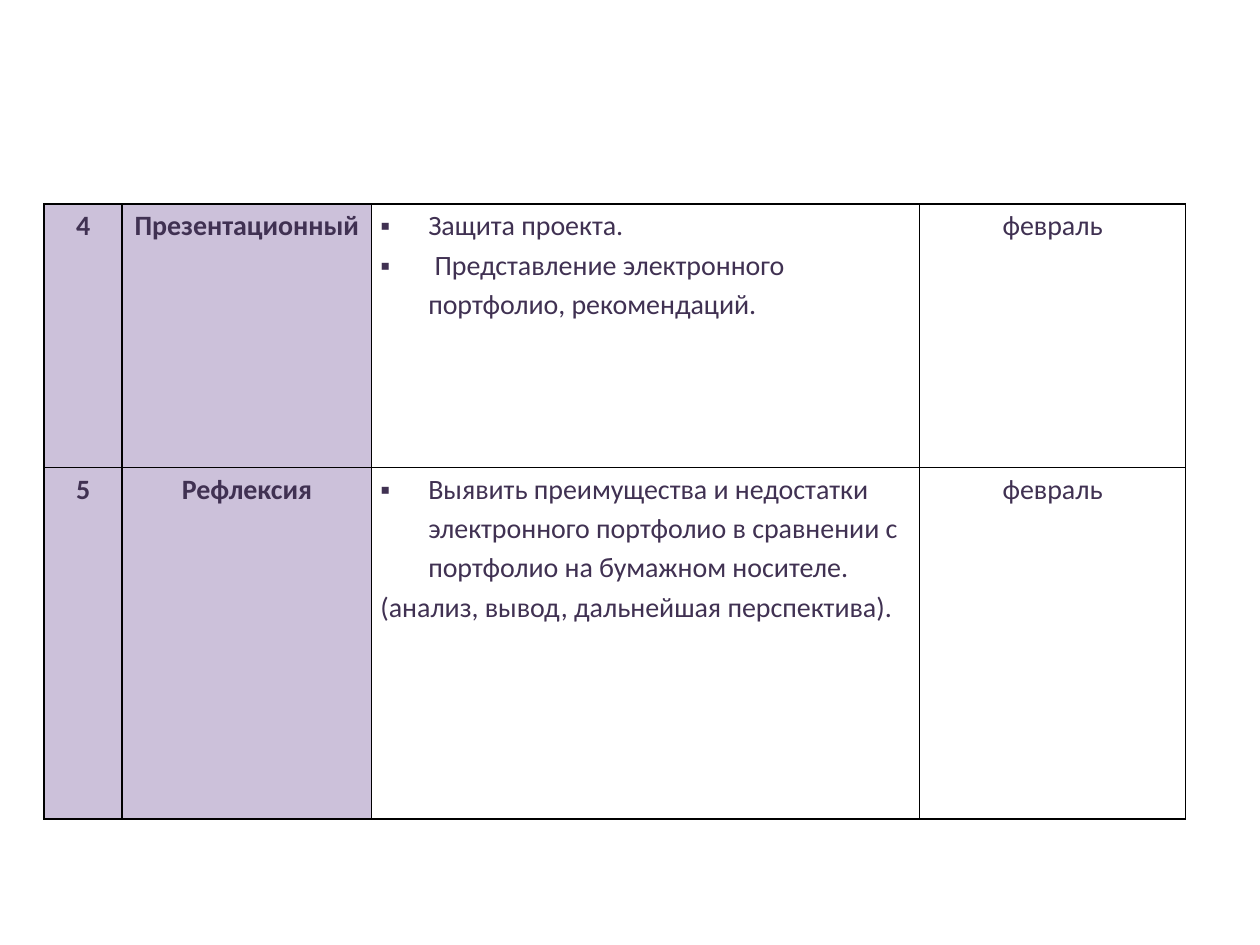
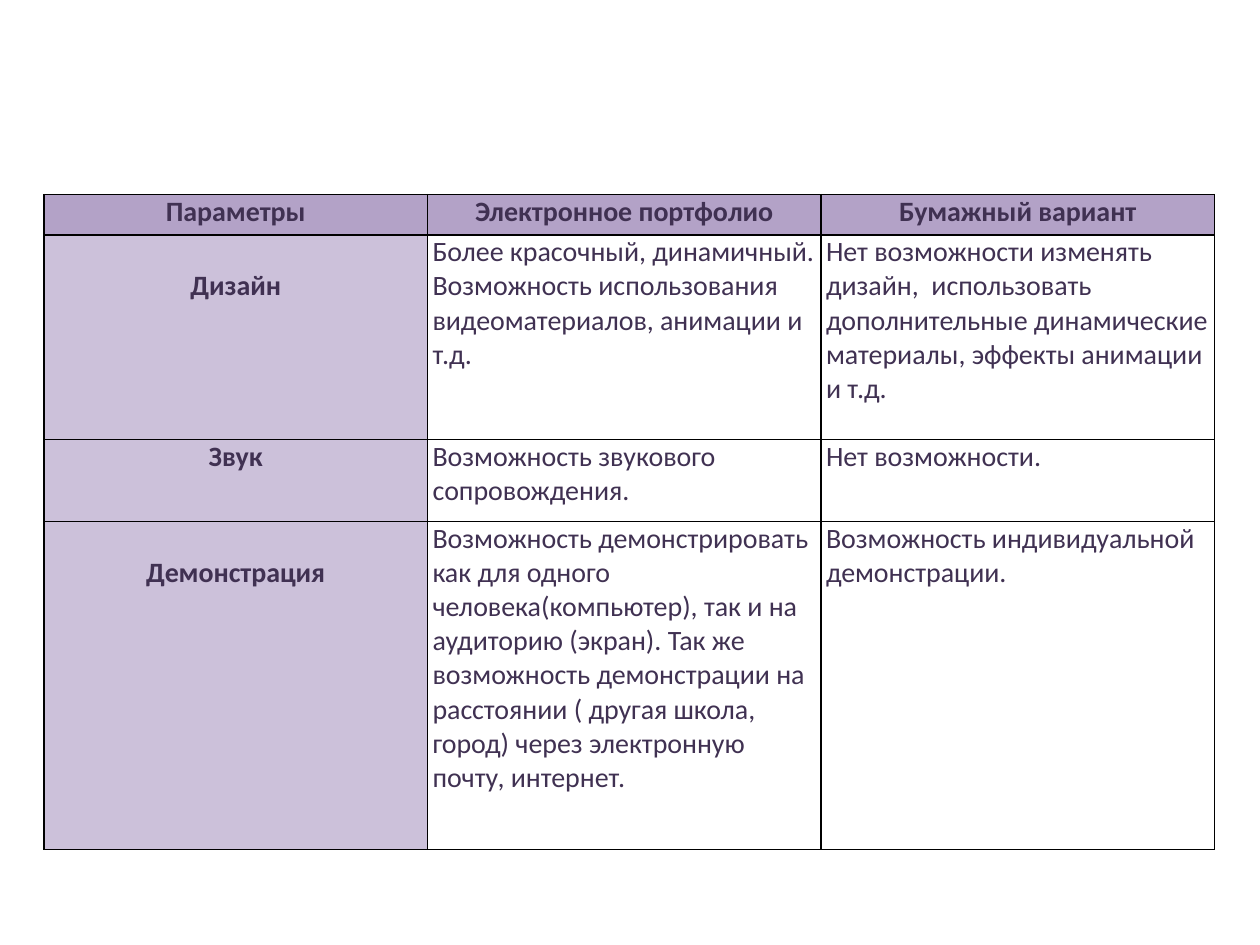
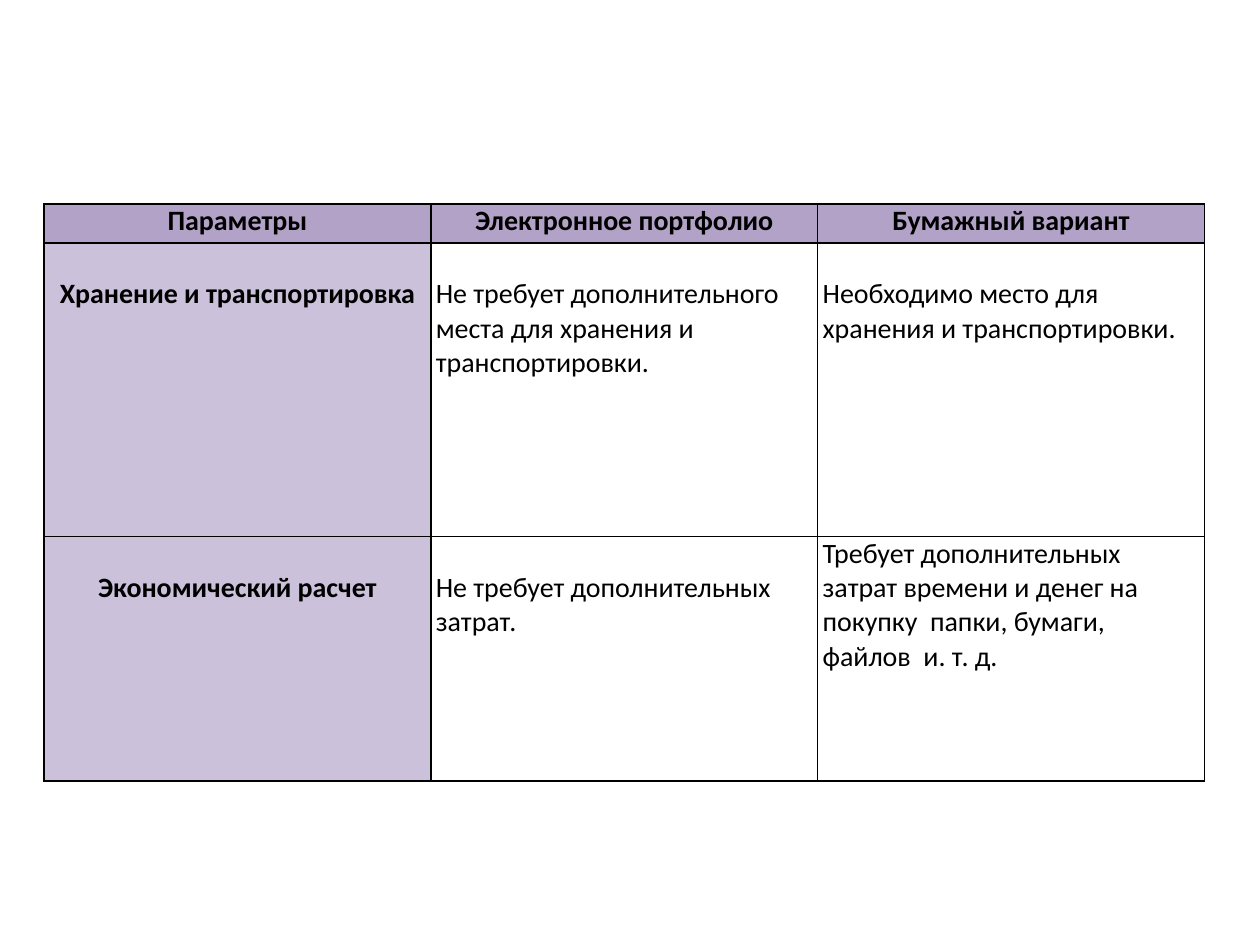
from dataclasses import dataclass

from lxml import etree
from pptx import Presentation
from pptx.dml.color import RGBColor
from pptx.enum.text import PP_ALIGN
from pptx.oxml.ns import qn
from pptx.util import Inches, Pt

LEFT, CENTER = PP_ALIGN.LEFT, PP_ALIGN.CENTER
SLIDE_W, SLIDE_H = Inches(10), Inches(7.5)
FONT, TEXT_SIZE = "Calibri", Pt(16)
DROP = Inches(0.27)
BULLET_INDENT = Inches(0.38)
BLANK_LAYOUT = 6

PURPLE_INK, BLACK = "403152", "000000"
HEADER_FILL, LABEL_FILL = "B3A2C7", "CCC1DA"
HEADINGS = ("Параметры", "Электронное портфолио", "Бумажный вариант")


@dataclass
class Entry:
    """Text of one table cell and the way it is set."""
    lines: tuple
    fill: str = ""
    bold: bool = False
    align: PP_ALIGN = LEFT
    bullets: int = 0
    dropped: bool = False


@dataclass
class Look:
    """Ink, side inset and line spacing of a table."""
    ink: str
    inset: int
    spacing: float


def header(text):
    """Return a column heading."""
    return Entry((text,), HEADER_FILL, True, CENTER)


def label(text, dropped=False):
    """Return a row label."""
    return Entry((text,), LABEL_FILL, True, CENTER, dropped=dropped)


def note(text, dropped=False):
    """Return a left-aligned description."""
    return Entry((text,), dropped=dropped)


def tasks(*lines, bullets):
    """Return a list whose first lines carry bullets."""
    return Entry(lines, bullets=bullets)


def month(text):
    """Return a centred date."""
    return Entry((text,), align=CENTER)


def color(value):
    """Turn a hex string into a colour."""
    return RGBColor.from_string(value)


def add_borders(cell):
    """Draw a one-point black line on each side of a cell."""
    properties = cell._tc.get_or_add_tcPr()
    for side in ("a:lnL", "a:lnR", "a:lnT", "a:lnB"):
        line = etree.SubElement(properties, qn(side), w=str(Pt(1)))
        solid = etree.SubElement(line, qn("a:solidFill"))
        etree.SubElement(solid, qn("a:srgbClr"), val=BLACK)


def add_bullet(paragraph):
    """Give a paragraph a square bullet and a hanging indent."""
    properties = paragraph._p.get_or_add_pPr()
    properties.set("marL", str(BULLET_INDENT))
    properties.set("indent", str(-BULLET_INDENT))
    etree.SubElement(properties, qn("a:buFont"), typeface="Arial")
    etree.SubElement(properties, qn("a:buChar"), char="▪")


def fill_cell(cell, entry, look):
    """Set the borders, fill and text of one cell."""
    add_borders(cell)
    if entry.fill:
        cell.fill.solid()
        cell.fill.fore_color.rgb = color(entry.fill)
    else:
        cell.fill.background()
    cell.margin_left = cell.margin_right = look.inset
    cell.margin_top = DROP if entry.dropped else 0
    cell.margin_bottom = 0
    frame = cell.text_frame
    for number, line in enumerate(entry.lines):
        paragraph = frame.add_paragraph() if number else frame.paragraphs[0]
        if number < entry.bullets:
            add_bullet(paragraph)
        paragraph.alignment = entry.align
        paragraph.line_spacing = look.spacing
        run = paragraph.add_run()
        run.text = line
        run.font.name, run.font.size = FONT, TEXT_SIZE
        run.font.bold = entry.bold
        run.font.color.rgb = color(look.ink)


def shares(total, weights):
    """Split a length in proportion to weights."""
    return [round(total * weight / sum(weights)) for weight in weights]


def add_table_slide(deck, box, columns, rows, entries, look):
    """Add a slide with a table in a box given in percent of the slide."""
    slide = deck.slides.add_slide(deck.slide_layouts[BLANK_LAYOUT])
    left, top, width, height = (
        round(side * percent / 100)
        for side, percent in zip((SLIDE_W, SLIDE_H) * 2, box))
    table = slide.shapes.add_table(
        len(rows), len(columns), left, top, width, height).table
    table.first_row = table.horz_banding = False
    for column, size in zip(table.columns, shares(width, columns)):
        column.width = size
    for row, size, row_entries in zip(table.rows, shares(height, rows), entries):
        row.height = size
        for cell, entry in zip(row.cells, row_entries):
            fill_cell(cell, entry, look)


def add_stages(deck):
    """Add the last stages of the project."""
    entries = [
        [label("4"), label("Презентационный"),
         tasks("Защита проекта.",
               " Представление электронного портфолио, рекомендаций.", bullets=2),
         month("февраль")],
        [label("5"), label("Рефлексия"),
         tasks("Выявить преимущества и недостатки электронного портфолио "
               "в сравнении с портфолио на бумажном носителе.",
               "(анализ, вывод, дальнейшая перспектива).", bullets=1),
         month("февраль")],
    ]
    add_table_slide(deck, (3.5, 21.6, 90.6, 65.07), (0.62, 1.98, 4.35, 2.11),
                    (2.09, 2.79), entries, Look(PURPLE_INK, Inches(0.07), 1.15))


def add_comparison(deck, box, columns, rows, entries, ink):
    """Add a comparison of both portfolio kinds under shared headings."""
    headings = [header(text) for text in HEADINGS]
    add_table_slide(deck, box, columns, rows, [headings] + entries,
                    Look(ink, Inches(0.04), 1.0))


def add_media_comparison(deck):
    """Compare design, sound and demonstration."""
    entries = [
        [label("Дизайн", dropped=True),
         note("Более красочный, динамичный. Возможность использования "
              "видеоматериалов, анимации и т.д."),
         note("Нет возможности изменять дизайн,  использовать дополнительные "
              "динамические материалы, эффекты анимации и т.д.")],
        [label("Звук"),
         note("Возможность звукового сопровождения."),
         note("Нет возможности.")],
        [label("Демонстрация", dropped=True),
         note("Возможность демонстрировать как для одного человека(компьютер), "
              "так и на аудиторию (экран). Так же возможность демонстрации на "
              "расстоянии ( другая школа, город) через электронную почту, "
              "интернет."),
         note("Возможность индивидуальной демонстрации.")],
    ]
    add_comparison(deck, (3.5, 20.6, 92.9, 69.3), (3.04, 3.12, 3.12),
                   (0.32, 1.62, 0.65, 2.6), entries, PURPLE_INK)


def add_cost_comparison(deck):
    """Compare storage and cost."""
    entries = [
        [label("Хранение и транспортировка", dropped=True),
         note("Не требует дополнительного места для хранения и "
              "транспортировки.", dropped=True),
         note("Необходимо место для хранения и транспортировки.",
              dropped=True)],
        [label("Экономический расчет", dropped=True),
         note("Не требует дополнительных затрат.", dropped=True),
         note("Требует дополнительных затрат времени и денег на покупку  "
              "папки, бумаги, файлов  и. т. д.")],
    ]
    add_comparison(deck, (3.5, 21.6, 92.1, 61.07), (1, 1, 1),
                   (0.31, 2.33, 1.94), entries, BLACK)


def main():
    """Build and save the deck."""
    deck = Presentation()
    deck.slide_width, deck.slide_height = SLIDE_W, SLIDE_H
    add_stages(deck)
    add_media_comparison(deck)
    add_cost_comparison(deck)
    deck.save("out.pptx")


if __name__ == "__main__":
    main()
